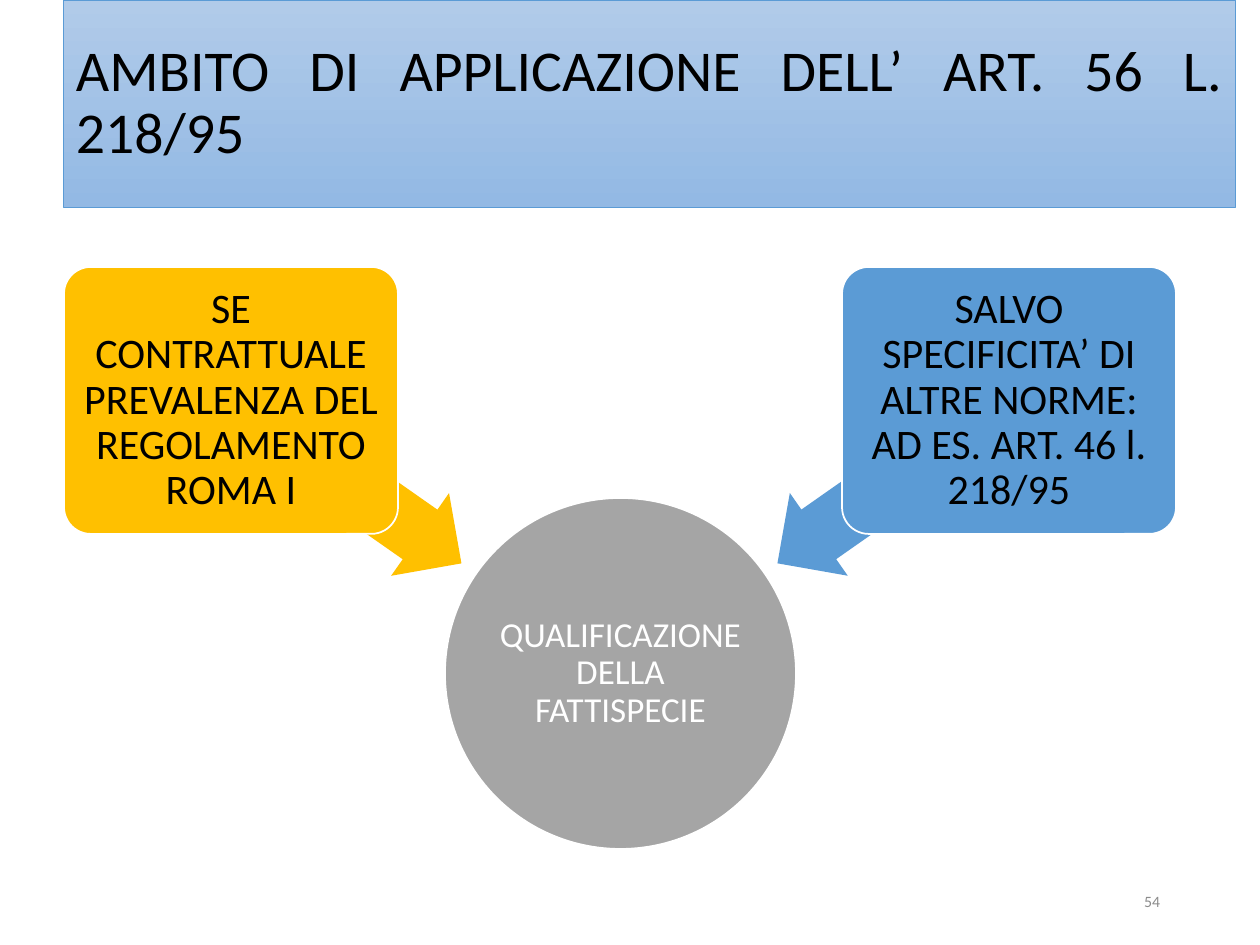
from pptx import Presentation
from pptx.dml.color import RGBColor
from pptx.enum.shapes import MSO_SHAPE
from pptx.enum.text import MSO_ANCHOR, PP_ALIGN
from pptx.util import Pt

RECT, ROUND = MSO_SHAPE.RECTANGLE, MSO_SHAPE.ROUNDED_RECTANGLE
OVAL, ARROW = MSO_SHAPE.OVAL, MSO_SHAPE.LEFT_ARROW
MIDDLE = MSO_ANCHOR.MIDDLE
LEFT, CENTER, RIGHT = PP_ALIGN.JUSTIFY, PP_ALIGN.CENTER, PP_ALIGN.RIGHT
PX = 914400 / 126

prs = Presentation()
prs.slide_width, prs.slide_height = round(1260 * PX), round(945 * PX)
slide = prs.slides.add_slide(prs.slide_layouts[6])


def add(kind, box, fill=None, line=None, width=1):
    """Add a shape, or a text box when kind is None; box is in px."""
    box = [round(v * PX) for v in box]
    if kind is None:
        return slide.shapes.add_textbox(*box)
    shape = slide.shapes.add_shape(kind, *box)
    shape.shadow.inherit = False
    if fill:
        shape.fill.solid()
        shape.fill.fore_color.rgb = RGBColor.from_string(fill)
    if line:
        shape.line.color.rgb = RGBColor.from_string(line)
        shape.line.width = Pt(width)
    else:
        shape.line.fill.background()
    return shape


def write(shape, text, size, color, align, inset=(13, 6), space=0.9):
    frame = shape.text_frame
    frame.word_wrap = True
    frame.vertical_anchor = MIDDLE
    frame.margin_left = frame.margin_right = round(inset[0] * PX)
    frame.margin_top = frame.margin_bottom = round(inset[1] * PX)
    para = frame.paragraphs[0]
    para.alignment = align
    para.line_spacing = space
    run = para.add_run()
    run.text = text
    run.font.size = Pt(size)
    run.font.name = "Calibri"
    run.font.color.rgb = RGBColor.from_string(color)


title = add(RECT, (63, 0, 1173, 207), line="5B9BD5", width=0.5)
title.fill.gradient()
title.fill.gradient_angle = 270
for stop, color in zip(title.fill.gradient_stops, ("B1CBE9", "93B9E4")):
    stop.color.rgb = RGBColor.from_string(color)
for stop, place in zip(title.fill.gradient_stops, (0, 1)):
    stop.position = place
write(title, "AMBITO DI APPLICAZIONE DELL’ ART. 56 L. 218/95", 33, "000000", LEFT)

hub = add(OVAL, (445, 498, 351, 351), "A5A5A5", "FFFFFF")
write(hub, "QUALIFICAZIONE DELLA FATTISPECIE", 20, "FFFFFF", CENTER, (1, 1))

sides = [
    (64, 205, 215, "FFC000", "SE CONTRATTUALE PREVALENZA DEL REGOLAMENTO ROMA I"),
    (842, 752, 325, "5B9BD5",
     "SALVO SPECIFICITA’ DI ALTRE NORME: AD ES. ART. 46 l. 218/95"),
]
for left, tail, turn, color, text in sides:
    arrow = add(ARROW, (tail, 432, 282, 101), color)
    arrow.adjustments[0] = 0.6
    arrow.adjustments[1] = 0.5
    arrow.rotation = turn
    card = add(ROUND, (left, 267, 334, 267), color, "FFFFFF")
    card.adjustments[0] = 0.1
    write(card, text, 24, "000000", CENTER, (6, 6))

number = add(None, (890, 876, 283, 50))
write(number, "54", 9, "8C8C8C", RIGHT, space=1.0)

prs.save("out.pptx")
